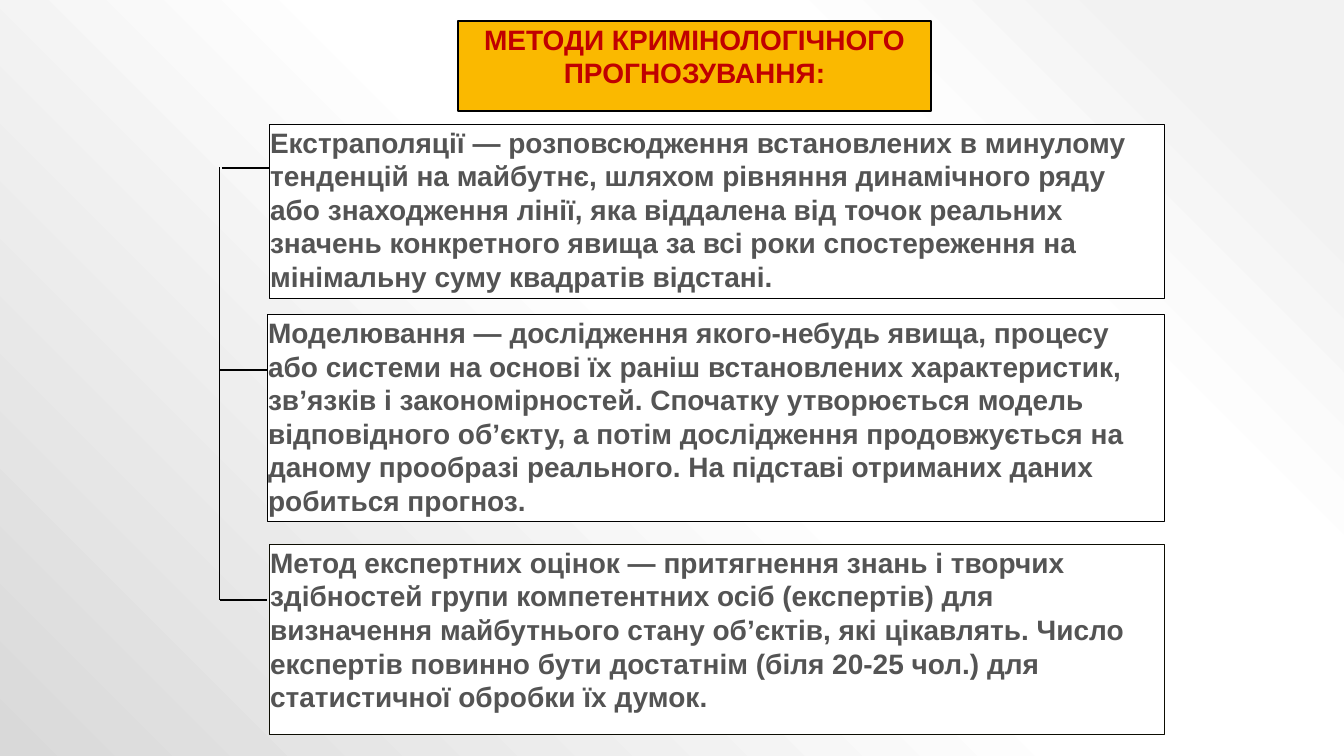
from dataclasses import dataclass

from lxml.etree import SubElement
from pptx import Presentation
from pptx.dml.color import RGBColor
from pptx.enum.shapes import MSO_CONNECTOR as Conn, MSO_SHAPE as Geom
from pptx.enum.text import MSO_ANCHOR as Anchor, MSO_AUTO_SIZE as AutoSize, PP_ALIGN as Align
from pptx.oxml import parse_xml
from pptx.oxml.ns import nsdecls, qn
from pptx.shapes.autoshape import Shape
from pptx.slide import Slide
from pptx.util import Pt


@dataclass(frozen=True)
class Theme:
    font: str = "Arial"
    size: float = 20
    inset: float = 0.72
    thin: float = 0.75
    thick: float = 1.5
    text: str = "545454"
    title: str = "C00000"
    title_fill: str = "FAB900"
    box_fill: str = "FFFFFF"
    line: str = "000000"
    dark_line: str = "0D0D03"
    backdrop: tuple[tuple[int, str], ...] = (
        (10, "F2F2F2"), (28, "FFFFFF"), (48, "FFFFFF"), (100, "D9D9D9"))


@dataclass(frozen=True)
class Method:
    left: float
    top: float
    height: float
    text: str
    line: str


@dataclass(frozen=True)
class Branch:
    x1: float
    y1: float
    x2: float
    y2: float
    weight: float


THEME = Theme()
BOX_RIGHT = 831.6
TRUNK_X = 157
TITLE = "МЕТОДИ КРИМІНОЛОГІЧНОГО ПРОГНОЗУВАННЯ:"

METHODS = [
    Method(192.2, 88.6, 124.6,
           "Екстраполяції — розповсюдження встановлених в минулому тенденцій на майбутнє, "
           "шляхом рівняння динамічного ряду або знаходження лінії, яка віддалена від точок "
           "реальних значень конкретного явища за всі роки спостереження на мінімальну суму "
           "квадратів відстані.", THEME.line),
    Method(190.8, 224.6, 147.6,
           "Моделювання — дослідження якого-небудь явища, процесу або системи на основі їх "
           "раніш встановлених характеристик, зв’язків і закономірностей. Спочатку "
           "утворюється модель відповідного об’єкту, а потім дослідження продовжується на "
           "даному прообразі реального. На підставі отриманих даних робиться прогноз.",
           THEME.line),
    Method(192.2, 388.8, 136.1,
           "Метод експертних оцінок — притягнення знань і творчих здібностей групи "
           "компетентних осіб (експертів) для визначення майбутнього стану об’єктів, які "
           "цікавлять. Число експертів повинно бути достатнім (біля 20-25 чол.) для "
           "статистичної обробки їх думок.", THEME.dark_line),
]

BRANCHES = [
    Branch(TRUNK_X, 119.5, TRUNK_X, 428.4, THEME.thin),
    Branch(TRUNK_X, 428.4, 190.8, 428.4, THEME.thick),
    Branch(TRUNK_X, 264.2, 190.8, 264.2, THEME.thick),
    Branch(158.4, 120.2, 192.2, 120.2, THEME.thick),
]


def rgb(color: str) -> RGBColor:
    return RGBColor.from_string(color)


def paint_background(s: Slide) -> None:
    fill = s.background.fill
    fill.gradient()
    grad = s.background._cSld.bg.bgPr.find(qn("a:gradFill"))
    stops = "".join(f'<a:gs pos="{pos * 1000}"><a:srgbClr val="{color}"/></a:gs>'
                    for pos, color in THEME.backdrop)
    radial = parse_xml(
        f'<a:gradFill {nsdecls("a")} rotWithShape="1"><a:gsLst>{stops}</a:gsLst>'
        '<a:path path="circle"><a:fillToRect l="100000" b="100000"/></a:path></a:gradFill>')
    grad.getparent().replace(grad, radial)


def style_box(sp: Shape, text: str, fill: str, line: str, weight: float,
              color: str, align: Align) -> None:
    sp.fill.solid()
    sp.fill.fore_color.rgb = rgb(fill)
    sp.line.color.rgb = rgb(line)
    sp.line.width = Pt(weight)
    tf = sp.text_frame
    tf.word_wrap = True
    tf.auto_size = AutoSize.NONE
    tf.vertical_anchor = Anchor.TOP
    tf.margin_left = tf.margin_top = tf.margin_right = tf.margin_bottom = Pt(THEME.inset)
    p = tf.paragraphs[0]
    p.text = text
    p.alignment = align
    p.font.name = THEME.font
    p.font.size = Pt(THEME.size)
    p.font.bold = True
    p.font.color.rgb = rgb(color)


def add_title(s: Slide) -> None:
    sp = s.shapes.title
    sp.left, sp.top, sp.width, sp.height = Pt(326.9), Pt(15.1), Pt(338.4), Pt(64.1)
    geom = SubElement(sp._element.spPr, qn("a:prstGeom"), prst="roundRect")
    SubElement(geom, qn("a:avLst"))
    style_box(sp, TITLE, THEME.title_fill, THEME.line, THEME.thick, THEME.title, Align.CENTER)


def add_method(s: Slide, m: Method) -> None:
    sp = s.shapes.add_shape(Geom.RECTANGLE, Pt(m.left), Pt(m.top),
                            Pt(BOX_RIGHT - m.left), Pt(m.height))
    sp.shadow.inherit = False
    style_box(sp, m.text, THEME.box_fill, m.line, THEME.thin, THEME.text, Align.LEFT)


def add_branch(s: Slide, b: Branch) -> None:
    cx = s.shapes.add_connector(Conn.STRAIGHT, Pt(b.x1), Pt(b.y1), Pt(b.x2), Pt(b.y2))
    cx.line.color.rgb = rgb(THEME.line)
    cx.line.width = Pt(b.weight)
    SubElement(cx._element.spPr, qn("a:effectLst"))


def main() -> None:
    prs = Presentation()
    prs.slide_width, prs.slide_height = Pt(960), Pt(540)
    s = prs.slides.add_slide(prs.slide_layouts[5])
    paint_background(s)
    add_title(s)
    for method in METHODS:
        add_method(s, method)
    for branch in BRANCHES:
        add_branch(s, branch)
    prs.save("out.pptx")


if __name__ == "__main__":
    main()
